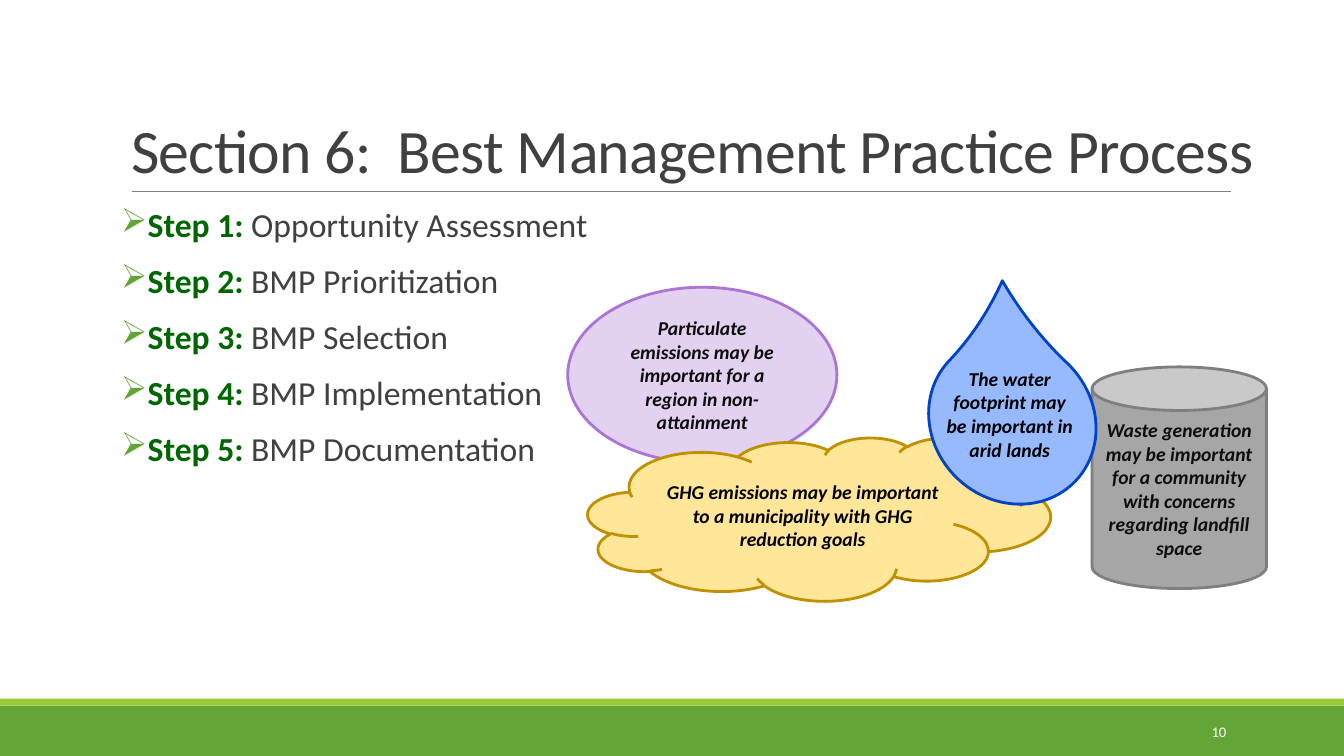
from lxml.etree import SubElement
from pptx import Presentation
from pptx.dml.color import RGBColor
from pptx.enum.shapes import MSO_CONNECTOR, MSO_SHAPE
from pptx.enum.text import MSO_ANCHOR, MSO_AUTO_SIZE, PP_ALIGN
from pptx.oxml.ns import qn
from pptx.util import Inches, Pt

WIDE, HIGH = Inches(13.33), Inches(7.5)
COL, ROW = WIDE / 100, HIGH / 100

GREEN = RGBColor(0x63, 0xA5, 0x37)
LIME = RGBColor(0x99, 0xCB, 0x38)
DARK = RGBColor(0x00, 0x66, 0x00)
TEXT = RGBColor(0x40, 0x40, 0x40)
RULE = RGBColor(0x80, 0x80, 0x80)
WHITE = RGBColor(0xFF, 0xFF, 0xFF)
BLACK = RGBColor(0x00, 0x00, 0x00)
INK = RGBColor(0x0D, 0x0D, 0x0D)
LILAC, PLUM = RGBColor(0xE3, 0xD1, 0xF1), RGBColor(0xAB, 0x74, 0xD5)
CREAM, GOLD = RGBColor(0xFF, 0xE6, 0x99), RGBColor(0xBF, 0x90, 0x00)
SILVER, GREY = RGBColor(0xA6, 0xA6, 0xA6), RGBColor(0x7F, 0x7F, 0x7F)
SKY, BLUE = RGBColor(0x97, 0xBA, 0xFF), RGBColor(0x00, 0x42, 0xC8)

STEPS = ["Opportunity Assessment", "BMP Prioritization", "BMP Selection",
         "BMP Implementation", "BMP Documentation"]
NOTES = [
    (MSO_SHAPE.OVAL, (0, 0, 20.03, 23.2), LILAC, PLUM, INK,
     "Particulate emissions may be important for a region in non-attainment"),
    (MSO_SHAPE.CLOUD, (1.5, 19.87, 34.43, 21.6), CREAM, GOLD, BLACK,
     "GHG emissions may be important to a municipality with GHG reduction goals"),
    (MSO_SHAPE.CAN, (39.01, 10.53, 12.98, 29.33), SILVER, GREY, INK,
     "Waste generation may be important for a community with concerns "
     "regarding landfill space"),
]


def spot(box, part=None):
    """Turn a part of a box, in columns and rows, into slide lengths."""
    left, top, width, height = box
    if part:
        left, top, width, height = left + part[0], top + part[1], part[2], part[3]
    return int(left * COL), int(top * ROW), int(width * COL), int(height * ROW)


def style(run, size, color, bold=False, slant=False):
    """Format one run."""
    font = run.font
    font.name, font.size, font.bold, font.italic = "Calibri", Pt(size), bold, slant
    font.color.rgb = color


def draw(slide, kind, place, fill, edge=None):
    """Add a flat preset shape."""
    shape = slide.shapes.add_shape(kind, *place)
    shape.shadow.inherit = False
    shape.fill.solid()
    shape.fill.fore_color.rgb = fill
    if edge is None:
        shape.line.fill.background()
    else:
        shape.line.color.rgb = edge
        shape.line.width = Pt(2)
    return shape


def label(shape, text, size, color, align, anchor, strong=False):
    """Write one wrapped paragraph in a shape."""
    frame = shape.text_frame
    frame.text = text
    frame.word_wrap = True
    frame.vertical_anchor = anchor
    line = frame.paragraphs[0]
    line.alignment = align
    style(line.runs[0], size, color, strong, strong)


def add_head(slide, box):
    """Place the title and the rule below it."""
    title = slide.shapes.title
    title.left, title.top, title.width, title.height = spot(box)
    label(title, "Section 6:  Best Management Practice Process", 44.1, TEXT,
          PP_ALIGN.LEFT, MSO_ANCHOR.BOTTOM)
    title.text_frame.auto_size = MSO_AUTO_SIZE.NONE
    line = title.text_frame.paragraphs[0]
    line.line_spacing = 0.85
    line.runs[0].font._element.set("spc", "-50")
    left, top, width, height = spot(box, (0.83, box[3], 81.77, 0))
    rule = slide.shapes.add_connector(MSO_CONNECTOR.STRAIGHT, left, top, left + width, top)
    rule.line.color.rgb = RULE
    rule.line.width = Pt(0.5)
    SubElement(rule._element.spPr, qn("a:effectLst"))


def add_steps(slide, box):
    """Place the list of numbered steps."""
    frame = slide.shapes.add_textbox(*spot(box)).text_frame
    frame.word_wrap = True
    frame.margin_left = frame.margin_right = 0
    for count, step in enumerate(STEPS, 1):
        line = frame.paragraphs[0] if count == 1 else frame.add_paragraph()
        line.text = f"Step {count}: "
        style(line.runs[0], 24, DARK, bold=True)
        name = line.add_run()
        name.text = step
        style(name, 24, TEXT)
        line.line_spacing = 0.9
        line.space_before, line.space_after = Pt(12), Pt(2)
        props = line._p.get_or_add_pPr()
        props.set("marL", str(Inches(0.1)))
        props.set("indent", str(Inches(-0.4)))
        tint = SubElement(props, qn("a:buClr"))
        SubElement(tint, qn("a:srgbClr"), val=str(GREEN))
        SubElement(props, qn("a:buChar"), char="➢")


def add_notes(slide, box):
    """Place the shapes that show what may matter where."""
    for kind, part, fill, edge, ink, text in NOTES:
        note = draw(slide, kind, spot(box, part), fill, edge)
        label(note, text, 14, ink, PP_ALIGN.CENTER, MSO_ANCHOR.MIDDLE, strong=True)
    drop = draw(slide, MSO_SHAPE.TEAR, spot(box, (27.16, 6.13, 11.85, 23.07)), SKY, BLUE)
    drop.adjustments[0] = 1.19
    drop.rotation = 313.5
    water = slide.shapes.add_textbox(*spot(box, (27.23, 9.87, 11.33, 14.67)))
    label(water, "The water footprint may be important in arid lands", 14, BLACK,
          PP_ALIGN.CENTER, MSO_ANCHOR.TOP, strong=True)


def add_foot(slide, box):
    """Place the two bands and the page number."""
    draw(slide, MSO_SHAPE.RECTANGLE, spot(box, (0, 0.93, 100, 6.67)), GREEN)
    draw(slide, MSO_SHAPE.RECTANGLE, spot(box, (0, 0, 100, 0.93)), LIME)
    page = slide.shapes.add_textbox(*spot(box, (81.25, 1.73, 10.73, 5.33)))
    label(page, "10", 10.5, WHITE, PP_ALIGN.RIGHT, MSO_ANCHOR.MIDDLE)


def main():
    """Build and save the slide."""
    deck = Presentation()
    deck.slide_width, deck.slide_height = WIDE, HIGH
    slide = deck.slides.add_slide(deck.slide_layouts[5])
    add_foot(slide, (0, 92.4, 100, 7.6))
    add_head(slide, (9, 4.13, 85.3, 21.2))
    add_steps(slide, (9, 26.93, 82.5, 58.67))
    add_notes(slide, (42.24, 38, 52, 41.47))
    deck.save("out.pptx")


if __name__ == "__main__":
    main()
